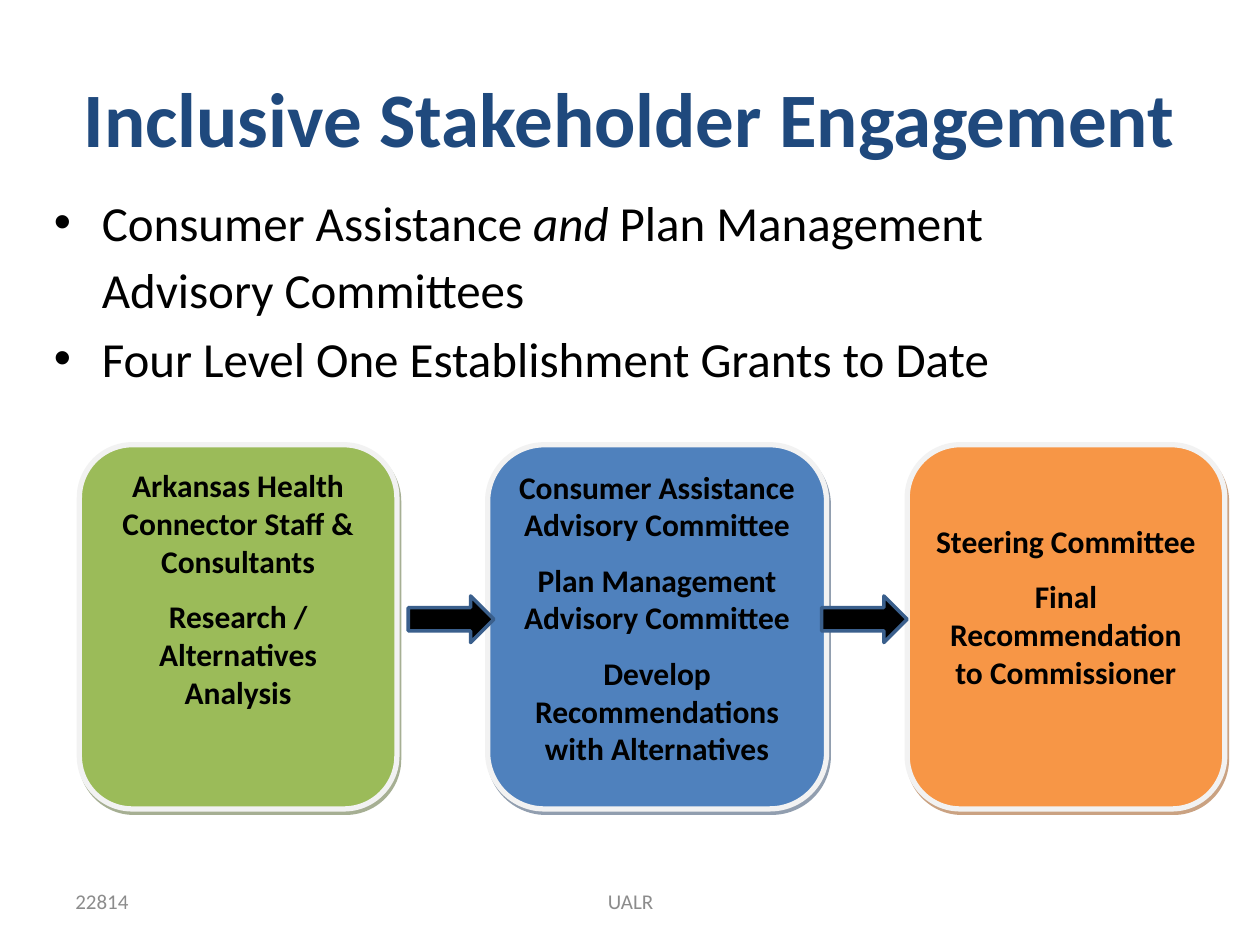
"""Build the stakeholder engagement slide."""
from lxml import etree
from pptx import Presentation
from pptx import util as u
from pptx.dml.color import RGBColor
from pptx.enum import shapes, text
from pptx.oxml import parse_xml
from pptx.oxml.ns import nsdecls, qn

MID = text.PP_ALIGN.CENTER


def color(code):
    """Turn a hex string into a colour."""
    return RGBColor.from_string(code)


def write(para, words, size, code, bold=False, slant=False):
    """Add one run to a paragraph."""
    run = para.add_run()
    run.text = words
    font = run.font
    font.name, font.size = "Calibri", u.Pt(size)
    font.bold, font.italic = bold, slant
    font.color.rgb = color(code)


deck = Presentation()
deck.slide_width, deck.slide_height = u.Inches(10), u.Inches(7.5)
slide = deck.slides.add_slide(deck.slide_layouts[6])

body = slide.shapes.add_textbox(u.Inches(0.33), u.Inches(1.41), u.Inches(8.2), u.Inches(1.8))
frame = body.text_frame
frame.word_wrap = True
points = [
    [("Consumer Assistance ", False), ("and", True), (" Plan Management Advisory Committees", False)],
    [("Four Level One Establishment Grants to Date", False)],
]
for i, runs in enumerate(points):
    para = frame.add_paragraph() if i else frame.paragraphs[0]
    props = para._p.get_or_add_pPr()
    props.set("marL", str(u.Inches(0.38)))
    props.set("indent", str(u.Inches(-0.38)))
    etree.SubElement(props, qn("a:buFont")).set("typeface", "Arial")
    etree.SubElement(props, qn("a:buChar")).set("char", "•")
    if i:
        para.space_before = u.Pt(5.6)
    else:
        para.line_spacing = u.Pt(38.4)
    for words, slant in runs:
        write(para, words, 28, "000000", slant=slant)

cards = [
    (0.63, 2.52, 0.05, "9BBB59", "4E6128",
     ["Arkansas Health Connector Staff & Consultants", "Research / Alternatives Analysis"]),
    (3.87, 2.69, 0.05, "4F81BD", "243F60",
     ["Consumer Assistance Advisory Committee", "Plan Management Advisory Committee",
      "Develop Recommendations with Alternatives"]),
    (7.2, 2.52, 0.49, "F79646", "974706",
     ["Steering Committee", "Final Recommendation to Commissioner"]),
]
for left, width, inset, fill, shade, lines in cards:
    card = slide.shapes.add_shape(
        shapes.MSO_SHAPE.ROUNDED_RECTANGLE,
        u.Inches(left), u.Inches(3.53), u.Inches(width), u.Inches(2.89))
    card.adjustments[0] = 0.167
    card.fill.solid()
    card.fill.fore_color.rgb = color(fill)
    card.line.color.rgb = color("F2F2F2")
    card.line.width = u.Pt(3)
    card._element.spPr.append(parse_xml(
        f'<a:effectLst {nsdecls("a")}><a:outerShdw blurRad="0" dist="{u.Pt(2.2)}" dir="3780000" '
        f'algn="ctr" rotWithShape="0"><a:srgbClr val="{shade}"><a:alpha val="50000"/>'
        '</a:srgbClr></a:outerShdw></a:effectLst>'))
    frame = card.text_frame
    frame.word_wrap = True
    frame.vertical_anchor = text.MSO_ANCHOR.TOP
    frame.margin_top = u.Inches(inset)
    for i, words in enumerate(lines):
        para = frame.add_paragraph() if i else frame.paragraphs[0]
        para.alignment, para.space_after = MID, u.Pt(10)
        write(para, words, 18, "000000", bold=True)

for left in (3.24, 6.52):
    arrow = slide.shapes.add_shape(
        shapes.MSO_SHAPE.RIGHT_ARROW,
        u.Inches(left), u.Inches(4.73), u.Inches(0.68), u.Inches(0.37))
    arrow.shadow.inherit = False
    arrow.fill.solid()
    arrow.fill.fore_color.rgb = color("000000")
    arrow.line.color.rgb = color("3A5F8C")
    arrow.line.width = u.Pt(2)

labels = [
    (0.5, 0.3, 9, 1.25, MID, "Inclusive Stakeholder Engagement", 44, "1F497D", True),
    (0.5, 6.95, 2.33, 0.4, text.PP_ALIGN.LEFT, "22814", 12, "8C8C8C", False),
    (3.42, 6.95, 3.17, 0.4, MID, "UALR", 12, "8C8C8C", False),
]
for left, top, width, height, align, words, size, code, bold in labels:
    box = slide.shapes.add_textbox(u.Inches(left), u.Inches(top), u.Inches(width), u.Inches(height))
    frame = box.text_frame
    frame.word_wrap = True
    frame.vertical_anchor = text.MSO_ANCHOR.MIDDLE
    para = frame.paragraphs[0]
    para.alignment = align
    write(para, words, size, code, bold)

deck.save("out.pptx")
